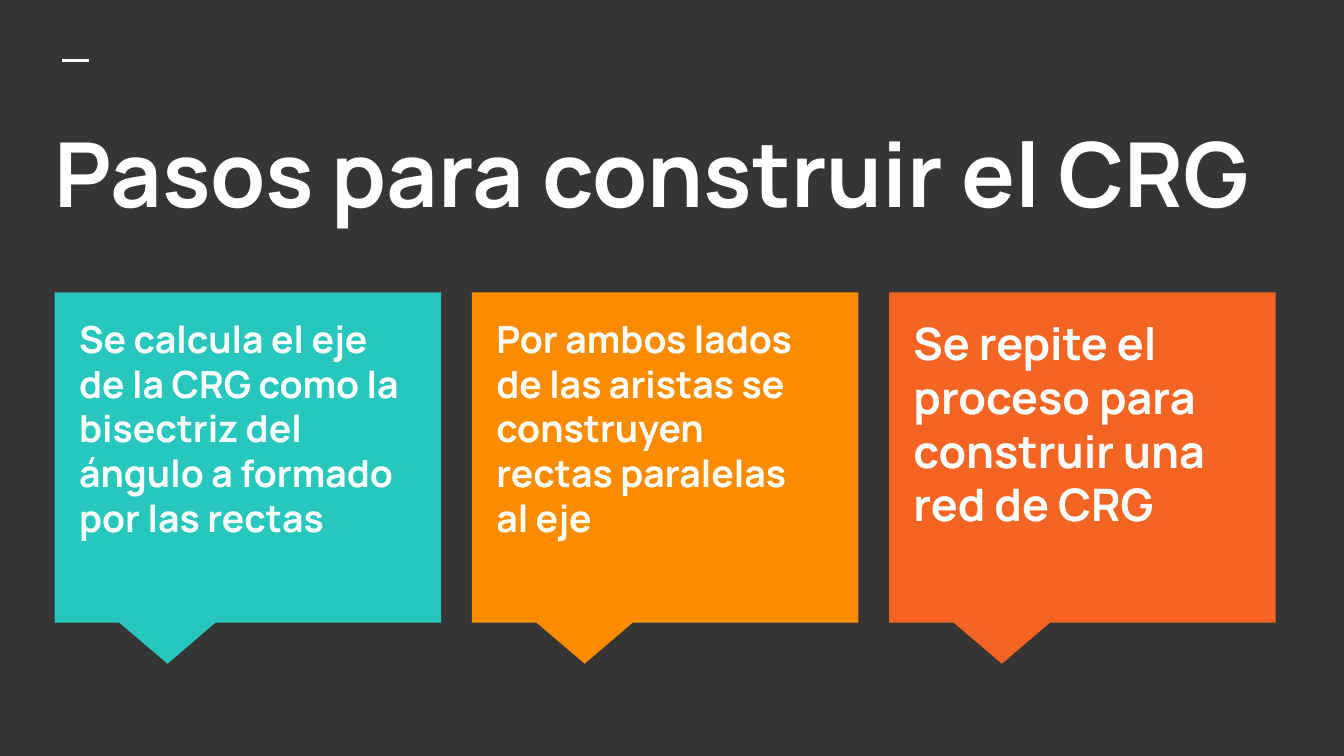
from dataclasses import dataclass

from pptx import Presentation
from pptx import util as u
from pptx.dml.color import RGBColor
from pptx.enum import shapes, text
from pptx.oxml.ns import qn
from pptx.slide import Slide
from pptx.util import Pt

FONT = "Manrope"
CHARCOAL = RGBColor(0x35, 0x35, 0x35)
WHITE = RGBColor(0xFF, 0xFF, 0xFF)
TEAL = RGBColor(0x27, 0xC7, 0xBD)
AMBER = RGBColor(0xFB, 0x8C, 0x00)
ORANGE = RGBColor(0xF4, 0x65, 0x24)

# Card row
CARD_LEFT, CARD_TOP = Pt(29.3), Pt(156.7)
CARD_WIDTH, CARD_HEIGHT = Pt(207), Pt(176.8)
CARD_PITCH = Pt(223.5)
POINTER_TIP = (-0.208, 0.625)


@dataclass(frozen=True)
class Step:
    wording: str
    color: RGBColor
    size: float


STEPS = [
    Step("Se calcula el eje de la CRG como la bisectriz del ángulo a formado por las rectas", TEAL, 20),
    Step("Por ambos lados de las aristas se construyen rectas paralelas al eje", AMBER, 20),
    Step("Se repite el proceso para construir una red de CRG", ORANGE, 24),
]


def add_text(slide: Slide, wording: str, *, left: u.Length, top: u.Length,
             width: u.Length, height: u.Length, size: float,
             space_after: float = 0) -> None:
    frame = slide.shapes.add_textbox(left, top, width, height).text_frame
    frame.word_wrap = True
    frame.vertical_anchor = text.MSO_ANCHOR.TOP
    frame.margin_left = frame.margin_right = Pt(7.2)
    frame.margin_top = frame.margin_bottom = Pt(7.2)
    paragraph = frame.paragraphs[0]
    paragraph.space_after = Pt(space_after)
    run = paragraph.add_run()
    run.text = wording
    run.font.name = FONT
    run.font.size = Pt(size)
    run.font.bold = True
    run.font.color.rgb = WHITE


def add_dash(slide: Slide) -> None:
    dash = slide.shapes.add_connector(
        shapes.MSO_CONNECTOR.STRAIGHT, Pt(33.5), Pt(32.5), Pt(47.9), Pt(32.5))
    dash.line.color.rgb = WHITE
    dash.line.width = Pt(1.5)
    properties = dash._element.spPr
    properties.append(properties.makeelement(qn("a:effectLst"), {}))


def add_step(slide: Slide, step: Step, left: u.Length) -> None:
    callout = slide.shapes.add_shape(
        shapes.MSO_SHAPE.RECTANGULAR_CALLOUT, left, CARD_TOP, CARD_WIDTH, CARD_HEIGHT)
    callout.adjustments[0], callout.adjustments[1] = POINTER_TIP
    callout.shadow.inherit = False
    callout.fill.solid()
    callout.fill.fore_color.rgb = step.color
    callout.line.fill.background()
    add_text(slide, step.wording, left=left + Pt(6), top=CARD_TOP + Pt(5.3),
             width=Pt(189.4), height=Pt(157.7), size=step.size, space_after=12)


def main() -> None:
    deck = Presentation()
    deck.slide_width, deck.slide_height = Pt(720), Pt(405)
    slide = deck.slides.add_slide(deck.slide_layouts[6])
    slide.background.fill.solid()
    slide.background.fill.fore_color.rgb = CHARCOAL

    # Heading
    add_dash(slide)
    add_text(slide, "Pasos para construir el CRG", left=Pt(22.3), top=Pt(56.2),
             width=Pt(679), height=Pt(80.6), size=48)

    # Steps
    for index, step in enumerate(STEPS):
        add_step(slide, step, CARD_LEFT + index * CARD_PITCH)

    deck.save("out.pptx")


if __name__ == "__main__":
    main()
